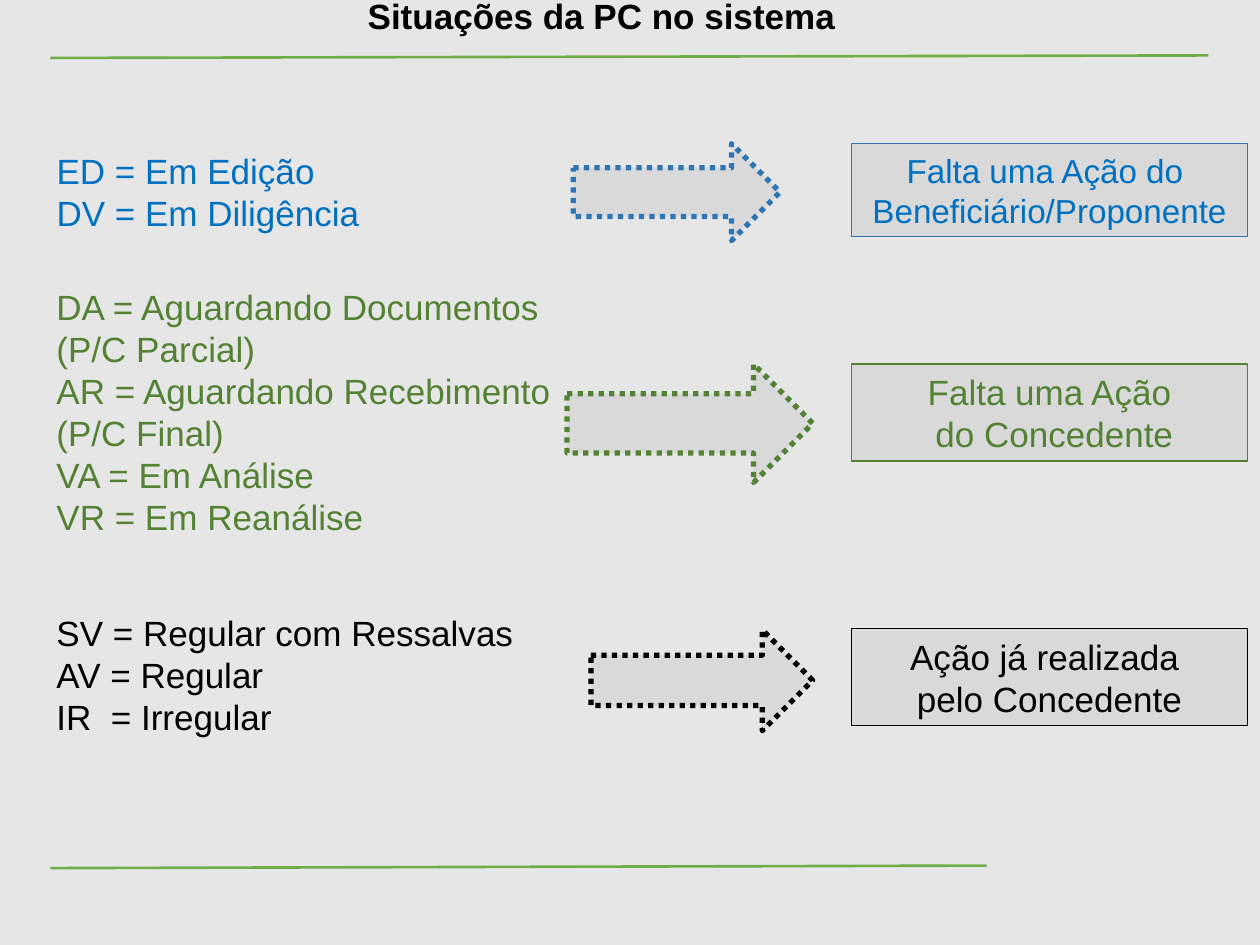
import pptx
import pptx.util
import pptx.dml.color
import pptx.enum.dml
import pptx.enum.shapes
import pptx.enum.text
import pptx.oxml.ns
import lxml.etree

Inches, Pt = pptx.util.Inches, pptx.util.Pt
RGBColor = pptx.dml.color.RGBColor
MSO_SHAPE = pptx.enum.shapes.MSO_SHAPE
PP_ALIGN = pptx.enum.text.PP_ALIGN

BACKGROUND = RGBColor(0xE7, 0xE6, 0xE6)
RULE = RGBColor(0x70, 0xAD, 0x47)
PANEL = RGBColor(0xD9, 0xD9, 0xD9)
BLUE_TEXT = RGBColor(0x00, 0x70, 0xC0)
BLUE_LINE = RGBColor(0x2E, 0x75, 0xB6)
GREEN = RGBColor(0x54, 0x82, 0x35)
BLACK = RGBColor(0x00, 0x00, 0x00)


def write_text(sp, lines, color=BLACK, size=20, bold=False, wrap=False,
               align=PP_ALIGN.LEFT, anchor=pptx.enum.text.MSO_ANCHOR.TOP):
    tf = sp.text_frame
    tf.word_wrap = wrap
    tf.vertical_anchor = anchor
    for i, line in enumerate(lines):
        p = tf.paragraphs[0] if i == 0 else tf.add_paragraph()
        p.alignment = align
        r = p.add_run()
        r.text = line
        r.font.name = "Arial"
        r.font.size = Pt(size)
        r.font.bold = bold
        r.font.color.rgb = color


def add_panel(s, preset, box, line_color, line_width):
    sp = s.shapes.add_shape(preset, *map(Inches, box))
    sp.shadow.inherit = False
    sp.fill.solid()
    sp.fill.fore_color.rgb = PANEL
    sp.line.color.rgb = line_color
    sp.line.width = Pt(line_width)
    return sp


prs = pptx.Presentation()
prs.slide_width, prs.slide_height = Inches(10), Inches(7.5)
s = prs.slides.add_slide(prs.slide_layouts[6])
s.background.fill.solid()
s.background.fill.fore_color.rgb = BACKGROUND

# Green rules at the bottom and top
for ends in [(0.4, 6.89, 7.83, 6.87), (0.4, 0.46, 9.59, 0.44)]:
    rule = s.shapes.add_connector(pptx.enum.shapes.MSO_CONNECTOR.STRAIGHT, *map(Inches, ends))
    rule.line.color.rgb = RULE
    rule.line.width = Pt(1.5)
    lxml.etree.SubElement(rule._element.spPr, pptx.oxml.ns.qn("a:effectLst"))

# Title
title = s.shapes.add_textbox(Inches(2.82), Inches(-0.09), Inches(3.94), Inches(0.44))
write_text(title, ["Situações da PC no sistema"], bold=True)

# Each group: codes, dotted arrow, pending action
# (text color, line color, codes box, codes, arrow box, action top, height, size, action)
groups = [
    (BLUE_TEXT, BLUE_LINE, (0.35, 1.14, 2.71, 1.11),
     ["ED = Em Edição", "DV = Em Diligência"],
     (4.55, 1.14, 1.64, 0.77),
     1.14, 0.74, 19, ["Falta uma Ação do ", "Beneficiário/Proponente"]),
    (GREEN, GREEN, (0.35, 2.22, 4.23, 2.46),
     ["DA = Aguardando Documentos", "(P/C Parcial)",
      "AR = Aguardando Recebimento", "(P/C Final)",
      "VA = Em Análise", "VR = Em Reanálise"],
     (4.5, 2.89, 1.95, 0.94),
     2.89, 0.77, 20, ["Falta uma Ação", " do Concedente"]),
    (BLACK, BLACK, (0.35, 4.8, 3.86, 1.45),
     ["SV = Regular com Ressalvas", "AV = Regular", "IR  = Irregular"],
     (4.69, 5, 1.76, 0.8),
     4.99, 0.77, 20, ["Ação já realizada ", "pelo Concedente"]),
]
for color, line_color, codes_box, codes, arrow_box, top, height, size, action in groups:
    sp = add_panel(s, MSO_SHAPE.RECTANGLE, (6.76, top, 3.14, height), line_color, 0.75)
    write_text(sp, action, color=color, size=size, wrap=True, align=PP_ALIGN.CENTER,
               anchor=pptx.enum.text.MSO_ANCHOR.MIDDLE)

    arrow = add_panel(s, MSO_SHAPE.RIGHT_ARROW, arrow_box, line_color, 3)
    arrow.line.dash_style = pptx.enum.dml.MSO_LINE.ROUND_DOT

    write_text(s.shapes.add_textbox(*map(Inches, codes_box)), codes, color=color)

prs.save("out.pptx")
